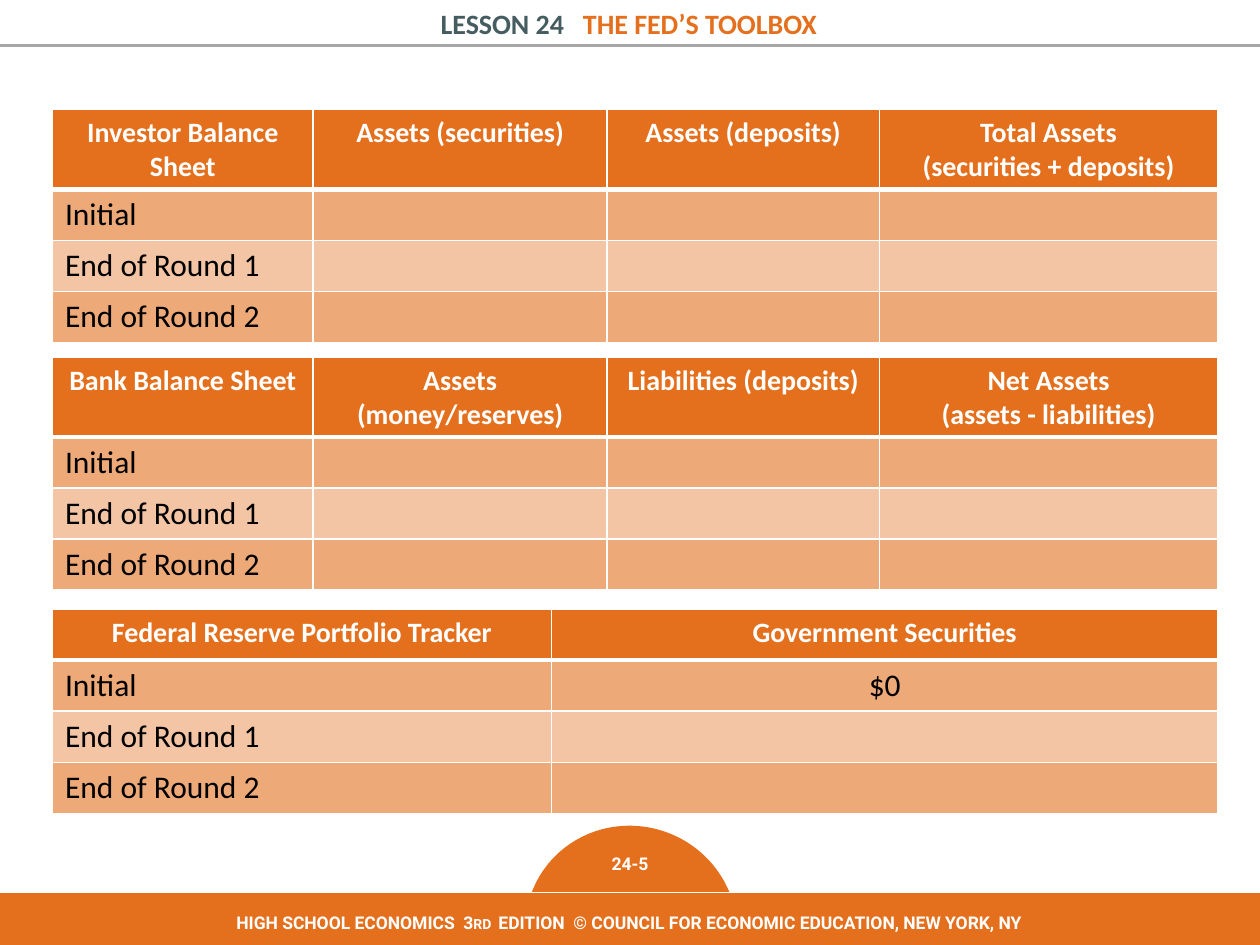
from dataclasses import dataclass

import pptx
import pptx.dml.color
import pptx.enum.shapes
import pptx.enum.text
import pptx.oxml.ns
import pptx.util
from lxml import etree

Pt = pptx.util.Pt
qn = pptx.oxml.ns.qn
SHAPE = pptx.enum.shapes.MSO_SHAPE
ANCHOR = pptx.enum.text.MSO_ANCHOR
ALIGN = pptx.enum.text.PP_ALIGN

ORANGE, SLATE, GRAY = "E4701E", "455C61", "A6A6A6"
WHITE, BLACK = "FFFFFF", "000000"
TABLE_LEFT, ROW_HEIGHT = 30, 29.2
SHEET_COLS = (149, 168, 155.5, 193.5)
TRACKER_COLS = (285.2, 380.8)
ROUNDS = ("Initial", "End of Round 1", "End of Round 2")


@dataclass
class Run:
    text: str
    color: str | None = None
    small_caps: bool = False
    gap: float = 0  # extra points in the space that follows


@dataclass
class Sheet:
    top: float
    cols: tuple[float, ...]
    header_height: float
    headers: tuple[str, ...]
    initial: str = ""


SHEETS = (
    Sheet(62.6, SHEET_COLS, 45,
          ("Investor Balance Sheet", "Assets (securities)", "Assets (deposits)",
           "Total Assets\n(securities + deposits)")),
    Sheet(204, SHEET_COLS, 45,
          ("Bank Balance Sheet", "Assets\n(money/reserves)",
           "Liabilities (deposits)", "Net Assets\n(assets - liabilities)")),
    Sheet(348, TRACKER_COLS, ROW_HEIGHT,
          ("Federal Reserve Portfolio Tracker", "Government Securities"), "$0"),
)


def rgb(color: str):
    return pptx.dml.color.RGBColor.from_string(color)


def write(tf, text: str | list[Run], size: float = 16, font: str = "Calibri",
          color: str = WHITE, bold: bool = True, align=ALIGN.CENTER) -> None:
    """Fill a text frame; a string gives one paragraph per line."""
    lines = [[Run(t)] for t in text.split("\n")] if isinstance(text, str) else [text]
    for i, line in enumerate(lines):
        p = tf.add_paragraph() if i else tf.paragraphs[0]
        p.alignment = align
        for item in line:
            for part in (item.text, " ") if item.gap else (item.text,):
                r = p.add_run()
                r.text = part
                r.font.size, r.font.name, r.font.bold = Pt(size), font, bold
                r.font.color.rgb = rgb(item.color or color)
                rPr = r.font._element
                if item.small_caps:
                    rPr.set("cap", "small")
                if part == " ":
                    rPr.set("spc", str(round(item.gap * 100)))


def place(sp, x: float, y: float, w: float, h: float) -> None:
    sp.left, sp.top, sp.width, sp.height = Pt(x), Pt(y), Pt(w), Pt(h)


def add_text(s, x: float, y: float, w: float, h: float, text, **fmt) -> None:
    tf = s.shapes.add_textbox(Pt(x), Pt(y), Pt(w), Pt(h)).text_frame
    tf.word_wrap = True
    write(tf, text, **fmt)


def add_shape(s, kind, x: float, y: float, w: float, h: float,
              line: str, line_width: float):
    sp = s.shapes.add_shape(kind, Pt(x), Pt(y), Pt(w), Pt(h))
    sp.shadow.inherit = False
    sp.fill.solid()
    sp.fill.fore_color.rgb = rgb(ORANGE)
    sp.line.color.rgb = rgb(line)
    sp.line.width = Pt(line_width)
    return sp


def style_cell(cell, row: int) -> None:
    """Set white borders, then an orange fill whose opacity depends on the row."""
    tcPr = cell._tc.get_or_add_tcPr()
    widths = {"lnL": 1, "lnR": 1, "lnT": 3 if row == 1 else 1, "lnB": 1 if row else 3}
    for tag, width in widths.items():
        ln = etree.SubElement(tcPr, qn(f"a:{tag}"), w=str(Pt(width)))
        fill = etree.SubElement(ln, qn("a:solidFill"))
        etree.SubElement(fill, qn("a:srgbClr"), val=WHITE)
    cell.fill.solid()
    cell.fill.fore_color.rgb = rgb(ORANGE)
    if row:
        clr = tcPr.find(qn("a:solidFill")).find(qn("a:srgbClr"))
        etree.SubElement(clr, qn("a:alpha"), val="60000" if row % 2 else "40000")


def add_sheet(s, sheet: Sheet) -> None:
    heights = [sheet.header_height] + [ROW_HEIGHT] * len(ROUNDS)
    table = s.shapes.add_table(
        len(heights), len(sheet.cols), Pt(TABLE_LEFT), Pt(sheet.top),
        Pt(sum(sheet.cols)), Pt(sum(heights))).table
    for col, width in zip(table.columns, sheet.cols):
        col.width = Pt(width)
    for i, height in enumerate(heights):
        table.rows[i].height = Pt(height)
        for cell in table.rows[i].cells:
            style_cell(cell, i)
    for j, header in enumerate(sheet.headers):
        write(table.cell(0, j).text_frame, header)
    body = dict(size=18, color=BLACK, bold=False)
    for i, label in enumerate(ROUNDS, 1):
        write(table.cell(i, 0).text_frame, label, align=ALIGN.LEFT, **body)
    if sheet.initial:
        cell = table.cell(1, 1)
        cell.vertical_anchor = ANCHOR.MIDDLE
        write(cell.text_frame, sheet.initial, **body)


def add_heading(s) -> None:
    rule = s.shapes.add_connector(
        pptx.enum.shapes.MSO_CONNECTOR.STRAIGHT, 0, Pt(26), Pt(720), Pt(26))
    rule.line.color.rgb = rgb(GRAY)
    rule.line.width = Pt(2)
    etree.SubElement(rule._element.spPr, qn("a:effectLst"))
    title = s.shapes.title
    place(title, 68.4, 0, 581.8, 26.6)
    tf = title.text_frame
    tf.auto_size = pptx.enum.text.MSO_AUTO_SIZE.NONE
    tf.vertical_anchor = ANCHOR.TOP
    write(tf, [Run("LESSON 24", SLATE, gap=7.2), Run("THE FED’S TOOLBOX", ORANGE)])


def add_footer(s) -> None:
    dome = add_shape(s, SHAPE.CHORD, 302.4, 471.6, 116.6, 119.5, ORANGE, 2)
    dome.rotation = 112.5
    dome.adjustments[0], dome.adjustments[1] = 39.96, 148.42
    small = dict(size=10, font="Roboto")
    add_text(s, 324, 483.8, 72, 19.4, "24-5", **small)
    add_shape(s, SHAPE.RECTANGLE, -2.9, 509.8, 724.3, 30.2, WHITE, 0.25)
    add_text(s, 92.2, 517.7, 534.2, 19.4, [
        Run("HIGH SCHOOL ECONOMICS", gap=2.5),
        Run("3"),
        Run("rd", small_caps=True, gap=1),
        Run("EDITION", gap=2.5),
        Run("© COUNCIL FOR ECONOMIC EDUCATION, NEW YORK, NY"),
    ], **small)


def main() -> None:
    prs = pptx.Presentation()
    prs.slide_width, prs.slide_height = Pt(720), Pt(540)
    s = prs.slides.add_slide(prs.slide_layouts.get_by_name("Title Only"))
    add_heading(s)
    add_footer(s)
    for sheet in SHEETS:
        add_sheet(s, sheet)
    prs.save("out.pptx")


if __name__ == "__main__":
    main()
